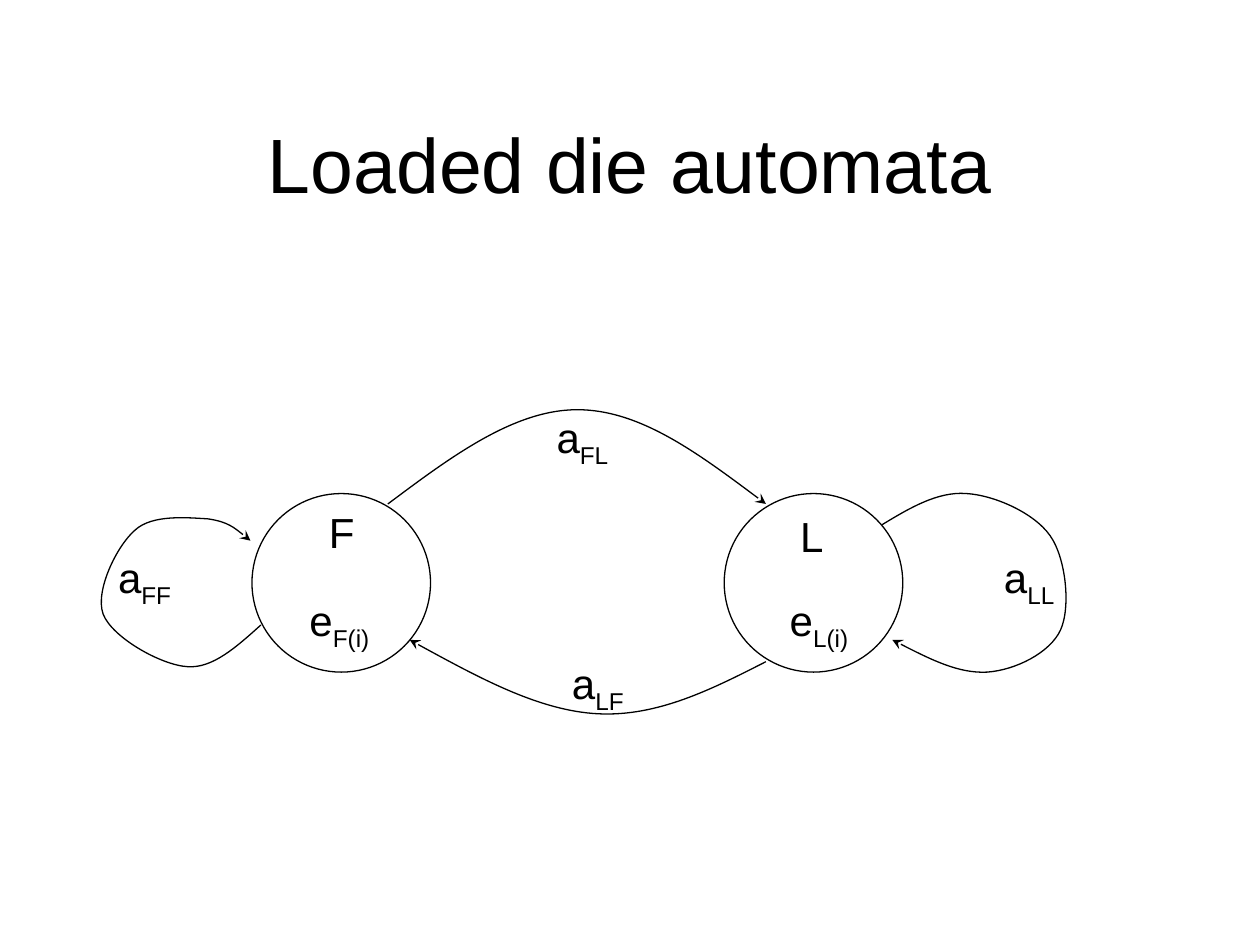
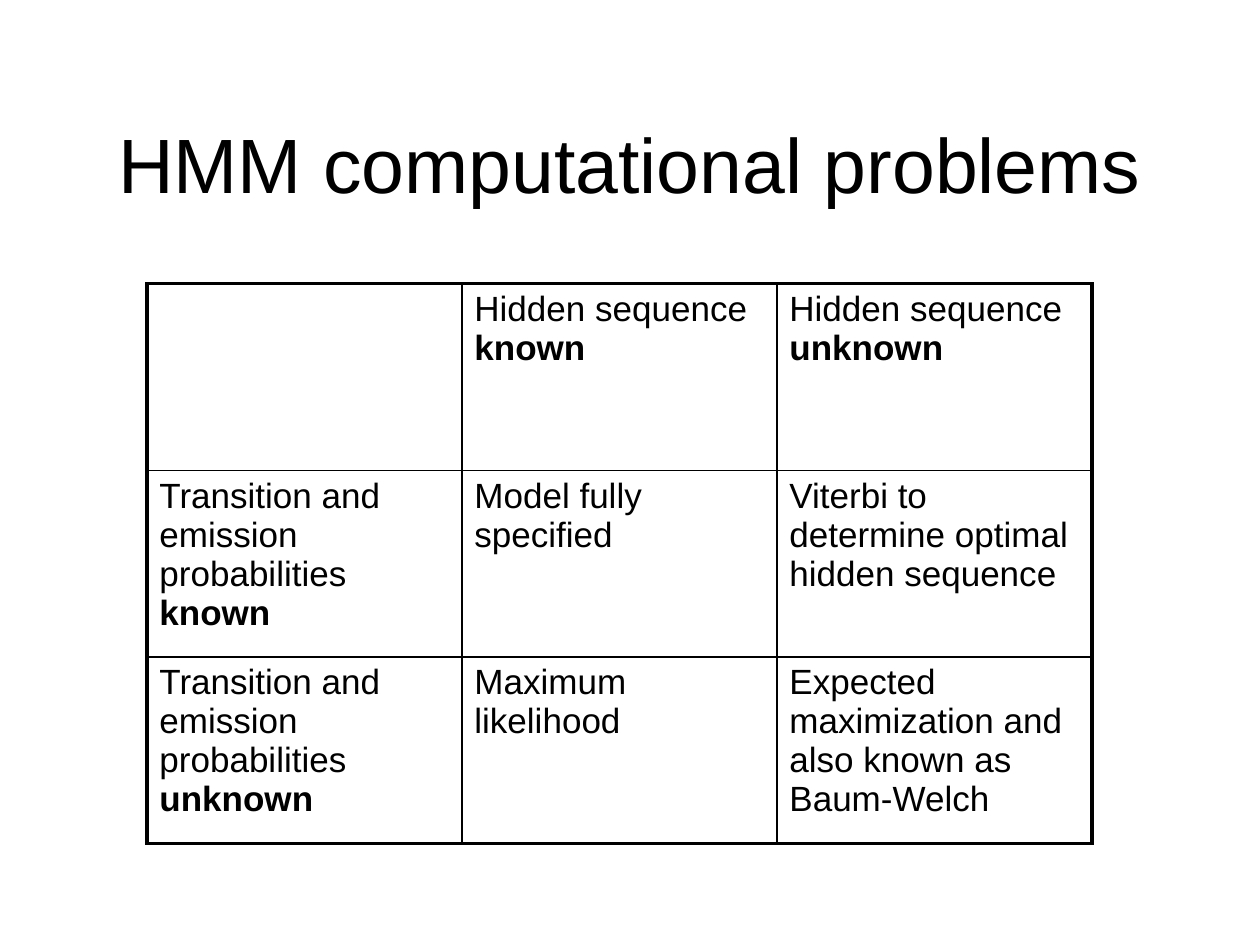
from dataclasses import dataclass
from typing import Optional

from lxml.etree import SubElement
from pptx import Presentation
from pptx.dml.color import RGBColor
from pptx.enum.shapes import MSO_SHAPE
from pptx.enum.text import MSO_ANCHOR, MSO_AUTO_SIZE, PP_ALIGN
from pptx.oxml.ns import qn
from pptx.util import Cm, Pt

FONT = "Arial"
BLACK = "000000"
WHITE = "FFFFFF"
THIN = 1
THICK = 2.25


@dataclass(frozen=True)
class State:
    left: float
    top: float = 9.95
    diameter: float = 3.6


@dataclass(frozen=True)
class Label:
    base: str
    subscript: str
    left: float
    top: float
    width: float


@dataclass(frozen=True)
class Transition:
    start: tuple
    controls: tuple


@dataclass(frozen=True)
class Entry:
    text: str = ""
    emphasis: str = ""


STATES = (State(5.08), State(14.6))

LABELS = (
    Label("F", "", 6.38, 10.08, 1.02),
    Label("L", "", 15.88, 10.16, 0.99),
    Label("a", "FL", 10.97, 8.18, 1.65),
    Label("a", "LF", 11.28, 13.13, 1.65),
    Label("e", "F(i)", 5.99, 11.86, 1.83),
    Label("e", "L(i)", 15.67, 11.86, 1.8),
    Label("a", "FF", 2.13, 11, 1.68),
    Label("a", "LL", 19.99, 11, 1.6),
)

TRANSITIONS = (
    Transition((7.82, 10.16), (
        (9.09, 9.21), (10.36, 8.26), (11.64, 8.26),
        (12.9, 8.26), (14.17, 9.21), (15.44, 10.16))),
    Transition((15.44, 13.34), (
        (14.36, 13.89), (13.26, 14.45), (12.06, 14.39),
        (10.87, 14.33), (9.56, 13.61), (8.26, 12.9))),
    Transition((5.26, 12.6), (
        (4.78, 13.03), (4.29, 13.48), (3.78, 13.44),
        (3.25, 13.41), (2.26, 12.85), (2.08, 12.38),
        (1.91, 11.91), (2.36, 11), (2.72, 10.69),
        (3.07, 10.36), (3.81, 10.44), (4.19, 10.46),
        (4.6, 10.52), (4.83, 10.72), (5.05, 10.9))),
    Transition((17.78, 10.58), (
        (18.34, 10.24), (18.9, 9.91), (19.47, 9.95),
        (20.04, 9.98), (20.85, 10.34), (21.17, 10.8),
        (21.49, 11.25), (21.59, 12.24), (21.38, 12.7),
        (21.17, 13.16), (20.47, 13.51), (19.9, 13.55),
        (19.33, 13.58), (18.67, 13.25), (17.99, 12.9))),
)

PROBLEMS = (
    (Entry(),
     Entry("Hidden sequence ", "known"),
     Entry("Hidden sequence ", "unknown")),
    (Entry("Transition and emission probabilities ", "known"),
     Entry("Model fully specified"),
     Entry("Viterbi to determine optimal hidden sequence")),
    (Entry("Transition and emission probabilities ", "unknown"),
     Entry("Maximum likelihood"),
     Entry("Expected maximization and also known as Baum-Welch")),
)


def colour(value: str) -> RGBColor:
    return RGBColor.from_string(value)


def write(paragraph, text: str, size: float, ending: str = ""):
    paragraph.text = text
    last = None
    if ending:
        last = paragraph.add_run()
        last.text = ending
    for run in paragraph.runs:
        run.font.name = FONT
        run.font.size = Pt(size)
        run.font.color.rgb = colour(BLACK)
    return last


def add_titled_slide(deck, heading: str):
    slide = deck.slides.add_slide(deck.slide_layouts[5])
    title = slide.shapes.title
    title.left, title.top = Cm(1.9), Cm(1.69)
    title.width, title.height = Cm(21.6), Cm(3.18)
    title.text_frame.vertical_anchor = MSO_ANCHOR.MIDDLE
    paragraph = title.text_frame.paragraphs[0]
    write(paragraph, heading, 44)
    paragraph.alignment = PP_ALIGN.CENTER
    return slide


def outline(shape) -> None:
    shape.shadow.inherit = False
    shape.fill.background()
    shape.line.color.rgb = colour(BLACK)
    shape.line.width = Pt(0.75)


def draw_state(slide, state: State) -> None:
    size = Cm(state.diameter)
    outline(slide.shapes.add_shape(
        MSO_SHAPE.OVAL, Cm(state.left), Cm(state.top), size, size))


def draw_transition(slide, transition: Transition) -> None:
    x, y = transition.start
    builder = slide.shapes.build_freeform(Cm(x), Cm(y))
    builder.add_line_segments(
        [(Cm(x), Cm(y)) for x, y in transition.controls], close=False)
    arrow = builder.convert_to_shape()
    outline(arrow)
    bend_segments(arrow)
    line = arrow.line._get_or_add_ln()
    SubElement(line, qn("a:tailEnd"), type="stealth")


def bend_segments(arrow) -> None:
    segments = arrow._element.xpath(".//a:lnTo")
    for first in range(0, len(segments), 3):
        curve = SubElement(segments[first].getparent(), qn("a:cubicBezTo"))
        for segment in segments[first:first + 3]:
            curve.append(segment[0])
            segment.getparent().remove(segment)


def draw_label(slide, label: Label) -> None:
    box = slide.shapes.add_textbox(
        Cm(label.left), Cm(label.top), Cm(label.width), Cm(1.27))
    frame = box.text_frame
    frame.word_wrap = False
    frame.auto_size = MSO_AUTO_SIZE.SHAPE_TO_FIT_TEXT
    subscript = write(frame.paragraphs[0], label.base, 24, label.subscript)
    if subscript is not None:
        subscript.font._element.set("baseline", "-25000")


def border(cell, side: str, width: float) -> None:
    properties = cell._tc.get_or_add_tcPr()
    line = SubElement(properties, qn(f"a:ln{side}"), w=str(Pt(width)))
    fill = SubElement(line, qn("a:solidFill"))
    SubElement(fill, qn("a:srgbClr"), val=BLACK)


def fill_cell(cell, entry: Entry, edges: dict[str, bool]) -> None:
    emphasis = write(
        cell.text_frame.paragraphs[0], entry.text, 20, entry.emphasis)
    if emphasis is not None:
        emphasis.font.bold = True
    for side, is_outer in edges.items():
        border(cell, side, THICK if is_outer else THIN)
    cell.fill.solid()
    cell.fill.fore_color.rgb = colour(WHITE)


def draw_problems(slide) -> None:
    rows, columns = len(PROBLEMS), len(PROBLEMS[0])
    table = slide.shapes.add_table(
        rows, columns, Cm(2.96), Cm(5.72), Cm(19.05), Cm(11.28)).table
    table.first_row = False
    table.horz_banding = False
    for r, entries in enumerate(PROBLEMS):
        for c, entry in enumerate(entries):
            edges = {"L": c == 0, "R": c == columns - 1,
                     "T": r == 0, "B": r == rows - 1}
            fill_cell(table.cell(r, c), entry, edges)


def main() -> None:
    deck = Presentation()
    deck.slide_width, deck.slide_height = Cm(25.4), Cm(19.05)

    automata = add_titled_slide(deck, "Loaded die automata")
    for state in STATES:
        draw_state(automata, state)
    for transition in TRANSITIONS:
        draw_transition(automata, transition)
    for label in LABELS:
        draw_label(automata, label)

    draw_problems(add_titled_slide(deck, "HMM computational problems"))
    deck.save("out.pptx")


if __name__ == "__main__":
    main()
